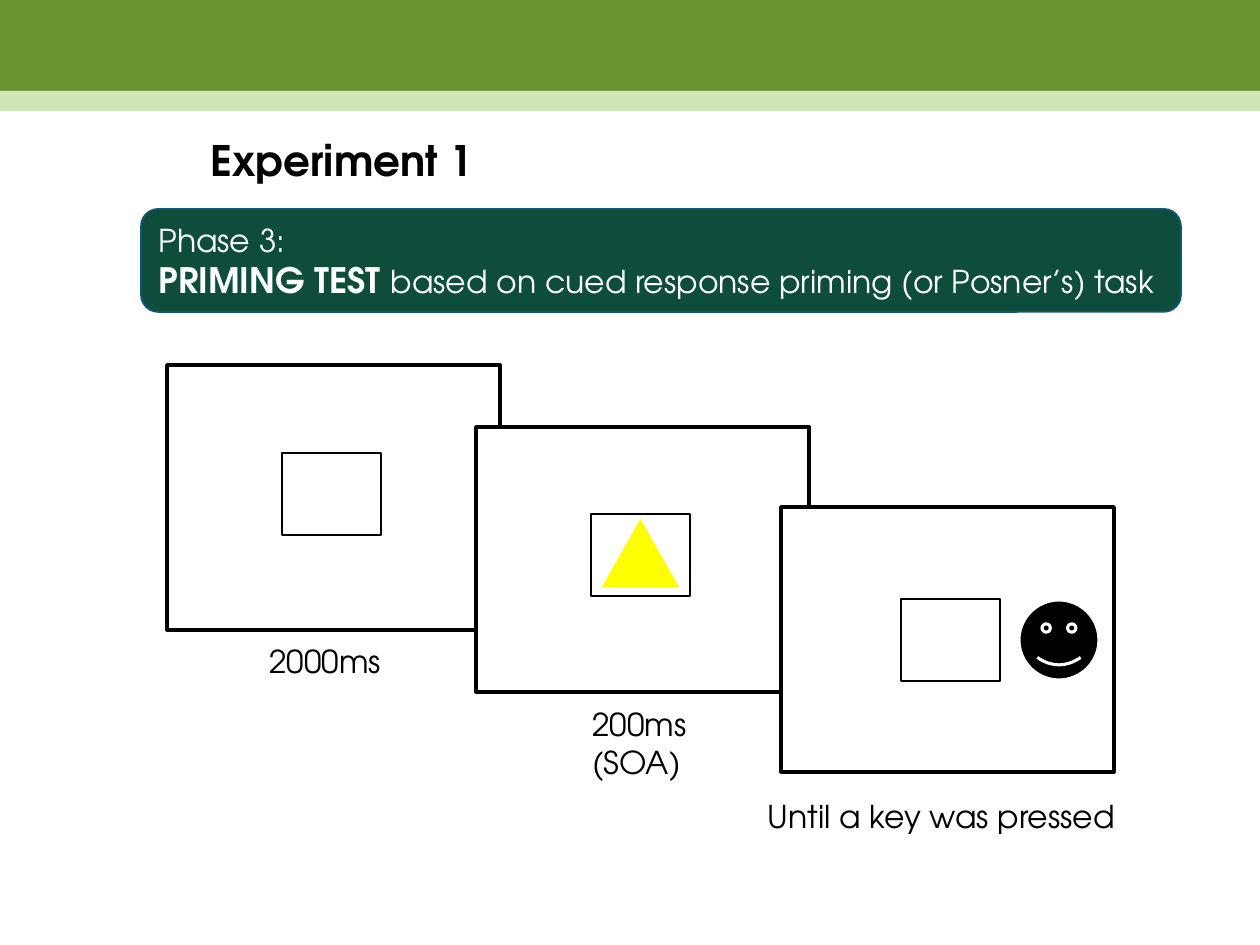
import pptx
import pptx.util
import pptx.dml.color
from pptx.enum.shapes import MSO_SHAPE as Kind
from pptx.enum.text import MSO_ANCHOR as Anchor, PP_ALIGN as Align
from dataclasses import dataclass

SCALE = 7257


@dataclass(frozen=True)
class Theme:
    font: str = "TeX Gyre Adventor"
    black: str = "000000"
    white: str = "FFFFFF"
    green: str = "699331"
    pale: str = "D1E6B5"
    dark: str = "0E4D3C"
    edge: str = "15527D"
    yellow: str = "FFFF00"
    title: int = 24
    strong: int = 20
    body: int = 18


theme = Theme()


def color(code):
    return pptx.dml.color.RGBColor.from_string(code)


def place(box):
    return [pptx.util.Emu(n * SCALE) for n in box]


def shift(box, part):
    return box[0] + part[0], box[1] + part[1], part[2], part[3]


def draw(slide, kind, box, fill, line=None, width=1):
    shape = slide.shapes.add_shape(kind, *place(box))
    shape.shadow.inherit = False
    shape.fill.solid()
    shape.fill.fore_color.rgb = color(fill)
    if line:
        shape.line.color.rgb = color(line)
        shape.line.width = pptx.util.Pt(width)
    else:
        shape.line.fill.background()
    return shape


def style(run, size, code, bold=False):
    run.font.name = theme.font
    run.font.size = pptx.util.Pt(size)
    run.font.color.rgb = color(code)
    run.font.bold = bold


def write(slide, box, text, size, bold=False):
    frame = slide.shapes.add_textbox(*place(box)).text_frame
    frame.word_wrap = True
    frame.text = text
    style(frame.paragraphs[0].runs[0], size, theme.black, bold)
    return frame


def add_bands(slide, box):
    left, top, width, height = box
    draw(slide, Kind.RECTANGLE, box, theme.green)
    draw(slide, Kind.RECTANGLE, (left, top + height - 19, width, 20), theme.pale)


def add_title(slide, box):
    frame = write(slide, box, "Experiment 1", theme.title, True)
    frame.vertical_anchor = Anchor.MIDDLE
    frame.paragraphs[0].alignment = Align.CENTER
    frame.paragraphs[0].line_spacing = 0.9


def add_phase(slide, box):
    frame = draw(slide, Kind.ROUNDED_RECTANGLE, box, theme.dark, theme.edge).text_frame
    frame.word_wrap = True
    frame.vertical_anchor = Anchor.MIDDLE
    frame.text = "Phase 3:\nPRIMING TEST "
    head, test = frame.paragraphs
    task = test.add_run()
    task.text = "based on cued response priming (or Posner’s) task"
    style(head.runs[0], theme.body, theme.white)
    style(test.runs[0], theme.strong, theme.white, True)
    style(task, theme.body, theme.white)
    for para in frame.paragraphs:
        para.alignment = Align.LEFT


def add_screen(slide, box, cue, label, text):
    draw(slide, Kind.RECTANGLE, box, theme.white, theme.black, 2)
    draw(slide, Kind.RECTANGLE, shift(box, (*cue, 99, 82)), theme.white, theme.black)
    write(slide, shift(box, label), text, theme.body)


def add_prime(slide, box):
    add_screen(slide, box, (115, 87), (104, 272, 145, 89), "200ms (SOA)")
    draw(slide, Kind.ISOSCELES_TRIANGLE, shift(box, (126, 92, 77, 68)), theme.yellow)


def add_target(slide, box):
    add_screen(slide, box, (120, 92), (-26, 284, 405, 50), "Until a key was pressed")
    draw(slide, Kind.SMILEY_FACE, shift(box, (238, 93, 80, 80)),
         theme.black, theme.white, 1.75)


def main():
    deck = pptx.Presentation()
    deck.slide_width, deck.slide_height = place((1260, 945))
    slide = deck.slides.add_slide(deck.slide_layouts[6])
    add_title(slide, (0, 64, 684, 198))
    add_bands(slide, (0, 0, 1260, 110))
    add_phase(slide, (141, 209, 1040, 103))
    size = 333, 265
    add_screen(slide, (167, 365, *size), (115, 88), (90, 271, 174, 50), "2000ms")
    add_prime(slide, (476, 427, *size))
    add_target(slide, (781, 507, *size))
    deck.save("out.pptx")


if __name__ == "__main__":
    main()
